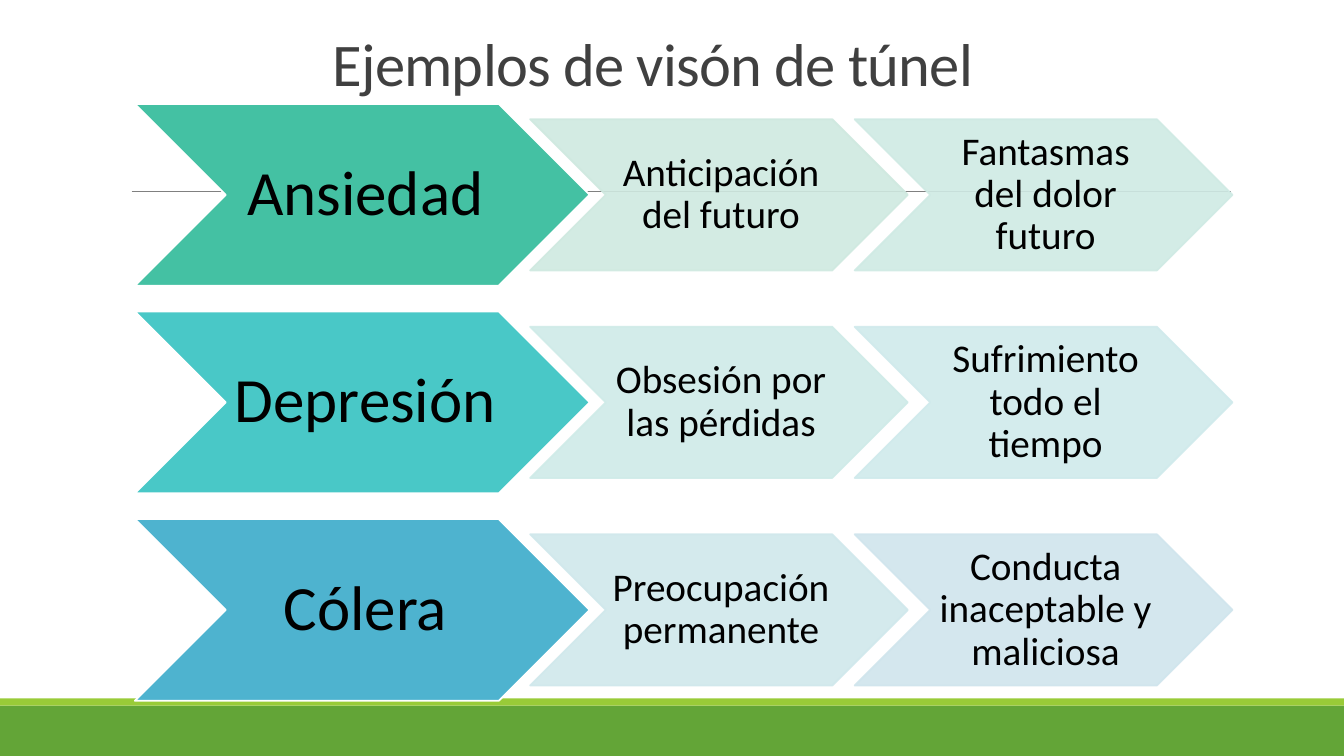
"""Build a slide of three chevron rows giving examples of tunnel vision."""
from lxml import etree
from pptx import Presentation
from pptx import util as u
from pptx.dml.color import RGBColor
from pptx.enum import shapes, text
from pptx.oxml.ns import qn

HUES = {
    "page": "FFFFFF", "ink": "000000", "title": "404040", "rule": "808080",
    "band": "63A537", "strip": "99CB38",
    "Ansiedad": ("44C1A3", "CFE9E0", "CFEAE4"),
    "Depresión": ("49C8C7", "CFEBE8", "D0EAEC"),
    "Cólera": ("4EB3CF", "D0E8EC", "D0E5ED"),
}
ROWS = [
    ("Ansiedad", "Anticipación del futuro", "Fantasmas del dolor futuro"),
    ("Depresión", "Obsesión por las pérdidas", "Sufrimiento todo el tiempo"),
    ("Cólera", "Preocupación permanente", "Conducta inaceptable y maliciosa"),
]
WIDE, HIGH = 33.87, 19.05


def paint(fill, hue, alpha=None):
    fill.solid()
    fill.fore_color.rgb = RGBColor.from_string(hue)
    if alpha:
        tone = fill._xPr.find(qn("a:solidFill"))[0]
        etree.SubElement(tone, qn("a:alpha"), val=str(alpha * 1000))


def write(shape, words, size, hue="ink", align=text.PP_ALIGN.CENTER,
          anchor=text.MSO_ANCHOR.MIDDLE, lead=0.9, pads=None, track=None):
    frame = shape.text_frame
    frame.word_wrap = True
    frame.vertical_anchor = anchor
    if pads:
        frame.margin_left, frame.margin_top, frame.margin_right, frame.margin_bottom = map(u.Cm, pads)
    para = frame.paragraphs[0]
    para.alignment, para.line_spacing = align, lead
    run = para.add_run()
    run.text = words
    run.font.name, run.font.size = "Calibri", u.Pt(size)
    run.font.color.rgb = RGBColor.from_string(HUES[hue])
    if track:
        run.font._element.set("spc", str(track))


def form(slide, kind, box, hue, edge=None, alpha=None):
    shape = slide.shapes.add_shape(kind, *map(u.Cm, box))
    shape.shadow.inherit = False
    paint(shape.fill, hue, alpha)
    if edge:
        paint(shape.line.fill, edge, alpha)
        shape.line.width = u.Pt(1.25)
    else:
        shape.line.fill.background()
    return shape


def base(slide, box):
    left, top, wide, high = box
    strip = 0.18
    kind = shapes.MSO_SHAPE.RECTANGLE
    form(slide, kind, (left, top + strip, wide, high - strip), HUES["band"])
    form(slide, kind, (left, top, wide, strip), HUES["strip"])


def rule(slide, box):
    left, top, wide, high = box
    line = slide.shapes.add_connector(
        shapes.MSO_CONNECTOR.STRAIGHT, *map(u.Cm, (left, top, left + wide, top + high)))
    paint(line.line.fill, HUES["rule"])
    line.line.width = u.Pt(0.5)
    etree.SubElement(line._element.spPr, qn("a:effectLst"))


def head(slide, box):
    area = slide.shapes.add_textbox(*map(u.Cm, box))
    write(area, "Ejemplos de visón de túnel", 43.2, hue="title", lead=0.85, track=-50,
          align=text.PP_ALIGN.LEFT, anchor=text.MSO_ANCHOR.BOTTOM)


def chain(slide, box, words):
    left, top, wide, high = box
    lead, *notes = words
    main, *pale = HUES[lead]
    kind = shapes.MSO_SHAPE.CHEVRON
    first = form(slide, kind, (left, top, 11.46, high), main, edge=HUES["page"])
    write(first, lead, 45, pads=(0.15, 0.08, 0, 0.08))
    small, tall, step = 9.52, 3.81, 8.18
    start = left + wide - small - step
    for at, (note, hue) in enumerate(zip(notes, pale)):
        spot = (start + at * step, top + (high - tall) / 2, small, tall)
        link = form(slide, kind, spot, hue, edge=hue, alpha=90)
        write(link, note, 28, pads=(0.1, 0.05, 0, 0.05))


def main():
    deck = Presentation()
    deck.slide_width, deck.slide_height = u.Cm(WIDE), u.Cm(HIGH)
    slide = deck.slides.add_slide(deck.slide_layouts[6])
    paint(slide.background.fill, HUES["page"])
    base(slide, (0, 17.6, WIDE, HIGH - 17.6))
    rule(slide, (3.32, 4.82, 27.69, 0))
    head(slide, (8.13, 0.79, 27.94, 1.83))
    for at, words in enumerate(ROWS):
        chain(slide, (3.4, 2.62 + at * 5.23, 27.66, 4.58), words)
    deck.save("out.pptx")


if __name__ == "__main__":
    main()
